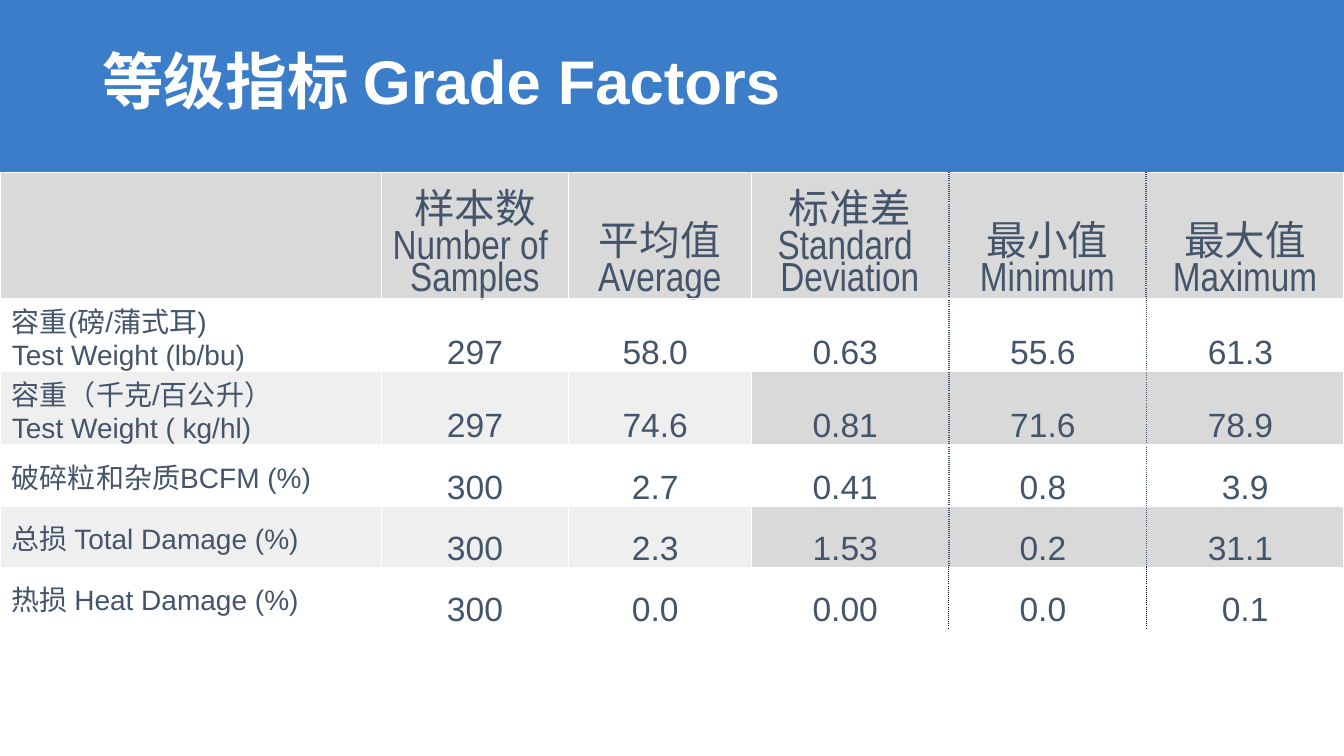
import pptx
import pptx.dml.color
import pptx.enum.shapes
import pptx.enum.text
import pptx.oxml
import pptx.oxml.ns
import pptx.util

Cm = pptx.util.Cm
Pt = pptx.util.Pt
ANCHOR = pptx.enum.text.MSO_ANCHOR
ALIGN = pptx.enum.text.PP_ALIGN

BLUE, WHITE, GREY, SLATE, BLACK = "3C7DCA", "FFFFFF", "D9D9D9", "44546A", "000000"
COLUMNS = [9.61, 4.72, 4.6, 4.98, 4.98, 4.98]
ROW_HEIGHTS = [2.92, 1.85, 1.85, 1.54, 1.54, 1.54]
GRADE_FACTORS = [
    ["", "样本数Number of \vSamples", "平均值Average", "标准差Standard \nDeviation",
     "最小值Minimum", "最大值Maximum"],
    ["容重(磅/蒲式耳)\nTest Weight (lb/bu)", "297", "58.0 ", "0.63 ", "55.6 ", "61.3 "],
    ["容重（千克/百公升）\nTest Weight ( kg/hl)", "297", "74.6 ", "0.81 ", "71.6 ", "78.9 "],
    ["破碎粒和杂质BCFM (%)", "300", "2.7 ", "0.41 ", "0.8 ", "3.9"],
    ["总损 Total Damage (%)", "300", "2.3 ", "1.53 ", "0.2 ", "31.1 "],
    ["热损 Heat Damage (%)", "300", "0.0 ", "0.00 ", "0.0 ", "0.1"],
]


def rgb(color):
    """Turn a hex string into a colour."""
    return pptx.dml.color.RGBColor.from_string(color)


def format_text(tf, size, color, font="Arial", bold=False, align=ALIGN.LEFT, spacing=1.0):
    """Format every paragraph and run of a text frame."""
    for p in tf.paragraphs:
        p.alignment = align
        p.line_spacing = spacing
        for r in p.runs:
            r.font.size = Pt(size)
            r.font.name = font
            r.font.bold = bold
            r.font.color.rgb = rgb(color)


def add_band(s, width, height):
    """Draw the blue band behind the title."""
    sp = s.shapes.add_shape(pptx.enum.shapes.MSO_SHAPE.RECTANGLE, 0, 0, width, height)
    sp.shadow.inherit = False
    sp.fill.solid()
    sp.fill.fore_color.rgb = rgb(BLUE)
    sp.line.fill.background()


def add_title(s, text):
    """Write the slide title."""
    tf = s.shapes.add_textbox(Cm(2.33), Cm(0.48), Cm(29.21), Cm(3.3)).text_frame
    tf.word_wrap = True
    tf.vertical_anchor = ANCHOR.MIDDLE
    tf.text = text
    format_text(tf, 44, WHITE, bold=True, spacing=0.9)


def add_border(cell, side, color, width):
    """Give one side of a cell a dotted line."""
    cell._tc.get_or_add_tcPr().append(pptx.oxml.parse_xml(
        f'<a:{side} {pptx.oxml.ns.nsdecls("a")} w="{Pt(width)}">'
        f'<a:solidFill><a:srgbClr val="{color}"/></a:solidFill>'
        f'<a:prstDash val="sysDot"/></a:{side}>'))


def fill_cell(cell, row):
    """Fill the header solid and every second data row translucent."""
    if row % 2:
        cell.fill.background()
        return
    cell.fill.solid()
    cell.fill.fore_color.rgb = rgb(GREY)
    if row:
        color = cell._tc.tcPr.find(".//" + pptx.oxml.ns.qn("a:srgbClr"))
        color.append(pptx.oxml.parse_xml(
            f'<a:alpha {pptx.oxml.ns.nsdecls("a")} val="40000"/>'))


def set_margins(cell, left, others):
    """Set the cell insets, with none at the bottom."""
    cell.margin_left = Cm(left)
    cell.margin_top = cell.margin_right = Cm(others)
    cell.margin_bottom = 0


def write_cell(cell, text, row, col):
    """Write a header, a factor name or a value."""
    cell.text_frame.text = text
    cell.vertical_anchor = ANCHOR.BOTTOM
    if row == 0:
        set_margins(cell, 0.03, 0.03)
        format_text(cell.text_frame, 29, SLATE, "Arial Narrow", align=ALIGN.CENTER, spacing=0.85)
    elif col == 0:
        cell.vertical_anchor = ANCHOR.MIDDLE
        set_margins(cell, 0.3, 0.03)
        format_text(cell.text_frame, 20, SLATE)
    else:
        set_margins(cell, 0, 0)
        format_text(cell.text_frame, 24, SLATE, align=ALIGN.CENTER)


def add_borders(cell, row, col):
    """Draw the dotted lines around the minimum column."""
    last = row == len(GRADE_FACTORS) - 1
    color, width = (BLACK, 1) if last else (SLATE, 1.5)
    if col == 3:
        add_border(cell, "lnR", color, width)
    if col == 4:
        add_border(cell, "lnL", color, width)
        if row:
            add_border(cell, "lnR", color, 0.5)
    if col == 5 and row:
        add_border(cell, "lnL", color, 0.5)


def add_grade_table(s):
    """Build the table of grade factors."""
    table = s.shapes.add_table(len(ROW_HEIGHTS), len(COLUMNS), 0, Cm(4.35),
                               Cm(sum(COLUMNS)), Cm(sum(ROW_HEIGHTS))).table
    table.first_row = table.horz_banding = False
    for column, width in zip(table.columns, COLUMNS):
        column.width = Cm(width)
    for row, texts in enumerate(GRADE_FACTORS):
        table.rows[row].height = Cm(ROW_HEIGHTS[row])
        for col, text in enumerate(texts):
            cell = table.cell(row, col)
            write_cell(cell, text, row, col)
            add_borders(cell, row, col)
            fill_cell(cell, row)


def main():
    """Build and save the slide."""
    prs = pptx.Presentation()
    prs.slide_width, prs.slide_height = Cm(33.87), Cm(19.05)
    s = prs.slides.add_slide(prs.slide_layouts[6])
    add_band(s, prs.slide_width, Cm(4.6))
    add_title(s, "等级指标 Grade Factors")
    add_grade_table(s)
    prs.save("out.pptx")


if __name__ == "__main__":
    main()
